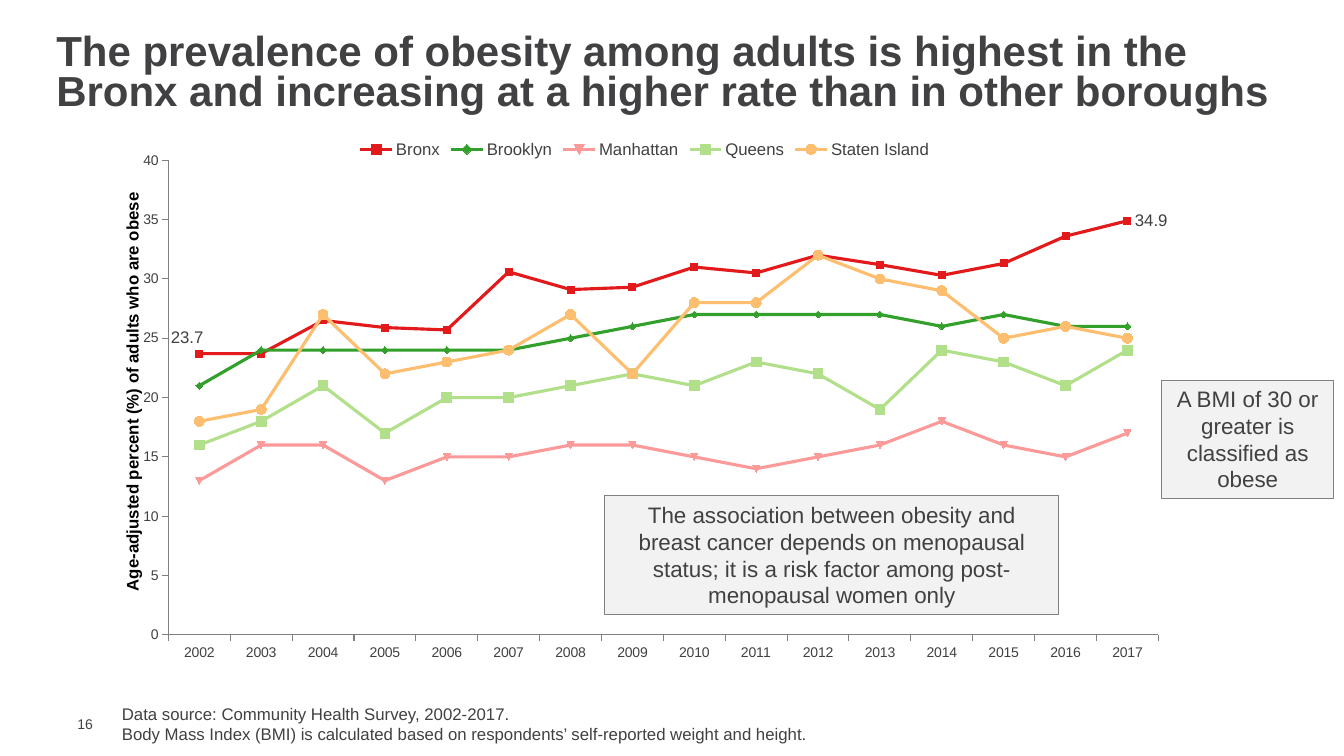
from dataclasses import dataclass, field
from typing import Any

from lxml import etree
from pptx import Presentation
from pptx.chart.data import CategoryChartData
from pptx.dml.color import RGBColor
from pptx.enum.chart import XL_CHART_TYPE as CT, XL_LABEL_POSITION as LP
from pptx.enum.chart import XL_LEGEND_POSITION, XL_MARKER_STYLE as MS, XL_TICK_MARK
from pptx.enum.shapes import MSO_SHAPE
from pptx.enum.text import MSO_ANCHOR as ANCHOR, MSO_AUTO_SIZE as AUTO, PP_ALIGN as ALIGN
from pptx.oxml.ns import qn
from pptx.util import Inches, Pt

FONT = "Arial"
COLORS = {
    "text": "414042", "axis_title": "000000", "axis": "808080",
    "note_fill": "F2F2F2", "note_line": "808080",
    "Bronx": "E31A1C", "Brooklyn": "33A02C", "Manhattan": "FB9A99",
    "Queens": "B2DF8A", "Staten Island": "FDBF6F",
}
YEARS = [str(y) for y in range(2002, 2018)]
CHART_AT = (1.11, 1.28, 10.57, 5.65)
CHART_SIZE = {"x": CHART_AT[2], "y": CHART_AT[3], "w": CHART_AT[2], "h": CHART_AT[3]}
EDGE = {"xMode": "edge", "yMode": "edge"}


@dataclass
class Box:
    at: tuple[float, float, float, float]
    lines: list[str]
    size: float
    bold: bool = False
    note: bool = False
    frame: dict[str, Any] = field(default_factory=dict)
    para: dict[str, Any] = field(default_factory=dict)


@dataclass
class Borough:
    name: str
    values: list[float]
    marker: Any = MS.AUTOMATIC
    marker_size: int = 5


CENTER = {"alignment": ALIGN.CENTER}
BOXES = [
    Box((0.67, 7.1, 0.43, 0.17), ["16"], 10,
        frame={"vertical_anchor": ANCHOR.MIDDLE, "margin_right": 0,
               "margin_top": 0, "margin_bottom": 0}),
    Box((0.46, 0.08, 12.41, 1.31),
        ["The prevalence of obesity among adults is highest in the Bronx and "
         "increasing at a higher rate than in other boroughs"], 30, bold=True,
        frame={"vertical_anchor": ANCHOR.MIDDLE, "auto_size": AUTO.NONE},
        para={"line_spacing": 0.8}),
    Box((1.11, 6.93, 9.71, 0.5),
        ["Data source: Community Health Survey, 2002-2017.",
         "Body Mass Index (BMI) is calculated based on respondents’ "
         "self-reported weight and height."], 12),
    Box((11.52, 3.77, 1.71, 1.18),
        ["A BMI of 30 or greater is classified as obese"], 16,
        note=True, para=CENTER),
]
CANCER_NOTE = Box(
    (6, 4.92, 4.5, 1.18),
    ["The association between obesity and breast cancer depends on menopausal "
     "status; it is a risk factor among post-menopausal women only"], 16,
    note=True, para=CENTER)

BOROUGHS = [
    Borough("Bronx", [23.7, 23.7, 26.5, 25.9, 25.7, 30.6, 29.1, 29.3,
                      31, 30.5, 32, 31.2, 30.3, 31.3, 33.6, 34.9]),
    Borough("Brooklyn", [21, 24, 24, 24, 24, 24, 25, 26,
                         27, 27, 27, 27, 26, 27, 26, 26]),
    Borough("Manhattan", [13, 16, 16, 13, 15, 15, 16, 16,
                          15, 14, 15, 16, 18, 16, 15, 17]),
    Borough("Queens", [16, 18, 21, 17, 20, 20, 21, 22,
                       21, 23, 22, 19, 24, 23, 21, 24], MS.SQUARE, 7),
    Borough("Staten Island", [18, 19, 27, 22, 23, 24, 27, 22,
                              28, 28, 32, 30, 29, 25, 26, 25], MS.CIRCLE, 7),
]


def rgb(name: str) -> RGBColor:
    return RGBColor.from_string(COLORS[name])


def apply(target: Any, values: dict[str, Any]) -> None:
    for key, value in values.items():
        setattr(target, key, value)


def style_font(font: Any, size: float, bold: bool = False, color: str = "text") -> None:
    apply(font, {"name": FONT, "size": Pt(size), "bold": bold})
    font.color.rgb = rgb(color)


def draw_box(s: Any, box: Box) -> None:
    at = [Inches(v) for v in box.at]
    if box.note:
        sp = s.shapes.add_shape(MSO_SHAPE.RECTANGLE, *at)
        sp.shadow.inherit = False
        sp.fill.solid()
        sp.fill.fore_color.rgb = rgb("note_fill")
        sp.line.color.rgb = rgb("note_line")
        sp.line.width = Pt(0.75)
    else:
        sp = s.shapes.add_textbox(*at)
    tf = sp.text_frame
    apply(tf, {"word_wrap": True, "vertical_anchor": ANCHOR.TOP,
               "auto_size": AUTO.SHAPE_TO_FIT_TEXT} | box.frame)
    for i, line in enumerate(box.lines):
        p = tf.paragraphs[0] if i == 0 else tf.add_paragraph()
        apply(p, box.para)
        r = p.add_run()
        r.text = line
        style_font(r.font, box.size, box.bold)


def style_axis(axis: Any) -> None:
    apply(axis, {"has_major_gridlines": False,
                 "major_tick_mark": XL_TICK_MARK.OUTSIDE,
                 "minor_tick_mark": XL_TICK_MARK.NONE})
    style_font(axis.tick_labels.font, 10)
    axis.format.line.color.rgb = rgb("axis")
    axis.format.line.width = Pt(0.75)


def set_layout(parent: Any, index: int, modes: dict[str, str],
               inches: dict[str, float]) -> None:
    for old in parent.findall(qn("c:layout")):
        parent.remove(old)
    layout = etree.Element(qn("c:layout"))
    manual = etree.SubElement(layout, qn("c:manualLayout"))
    shares = {key: round(v / CHART_SIZE[key], 4) for key, v in inches.items()}
    for tag, value in (modes | shares).items():
        etree.SubElement(manual, qn(f"c:{tag}")).set("val", str(value))
    parent.insert(index, layout)


def style_series(series: Any, borough: Borough) -> None:
    color = rgb(borough.name)
    series.smooth = False
    series.format.line.color.rgb = color
    series.format.line.width = Pt(2.25)
    apply(series.marker, {"style": borough.marker, "size": borough.marker_size})
    fmt = series.marker.format
    fmt.fill.solid()
    fmt.fill.fore_color.rgb = color
    fmt.line.color.rgb = color


def draw_chart(s: Any) -> None:
    data = CategoryChartData()
    data.categories = YEARS
    for borough in BOROUGHS:
        data.add_series(borough.name, borough.values)
    at = [Inches(v) for v in CHART_AT]
    chart = s.shapes.add_chart(CT.LINE_MARKERS, *at, data).chart
    apply(chart, {"has_title": False, "has_legend": True})
    style_font(chart.font, 18)
    apply(chart.legend, {"position": XL_LEGEND_POSITION.TOP,
                         "include_in_layout": False})
    style_font(chart.legend.font, 12)

    for axis in (chart.category_axis, chart.value_axis):
        style_axis(axis)
    apply(chart.value_axis, {"minimum_scale": 0, "maximum_scale": 40,
                             "major_unit": 5})
    p = chart.value_axis.axis_title.text_frame.paragraphs[0]
    r = p.add_run()
    r.text = "Age-adjusted percent (%) of adults who are obese"
    style_font(r.font, 12, True, "axis_title")

    plot = chart.plots[0]
    plot.vary_by_categories = False
    for series, borough in zip(plot.series, BOROUGHS):
        style_series(series, borough)
    bronx = plot.series[0]
    bronx.data_labels.show_value = False
    for i, position in ((0, LP.ABOVE), (len(YEARS) - 1, LP.RIGHT)):
        label = bronx.points[i].data_label
        style_font(label.font, 12)
        label.position = position

    space = chart._chartSpace
    set_layout(space.find(".//" + qn("c:plotArea")), 0,
               {"layoutTarget": "inner"} | EDGE,
               {"x": 0.56, "y": 0.31, "w": 9.82, "h": 4.71})
    set_layout(space.find(".//" + qn("c:valAx") + "/" + qn("c:title")), 1,
               EDGE, {"x": 0.07, "y": 0.6})
    set_layout(space.find(".//" + qn("c:dLbl")), 1, {}, {"x": -0.12, "y": 0})


def main() -> None:
    prs = Presentation()
    apply(prs, {"slide_width": Inches(13.33), "slide_height": Inches(7.5)})
    s = prs.slides.add_slide(prs.slide_layouts[6])
    for box in BOXES:
        draw_box(s, box)
    draw_chart(s)
    draw_box(s, CANCER_NOTE)
    prs.save("out.pptx")


if __name__ == "__main__":
    main()
